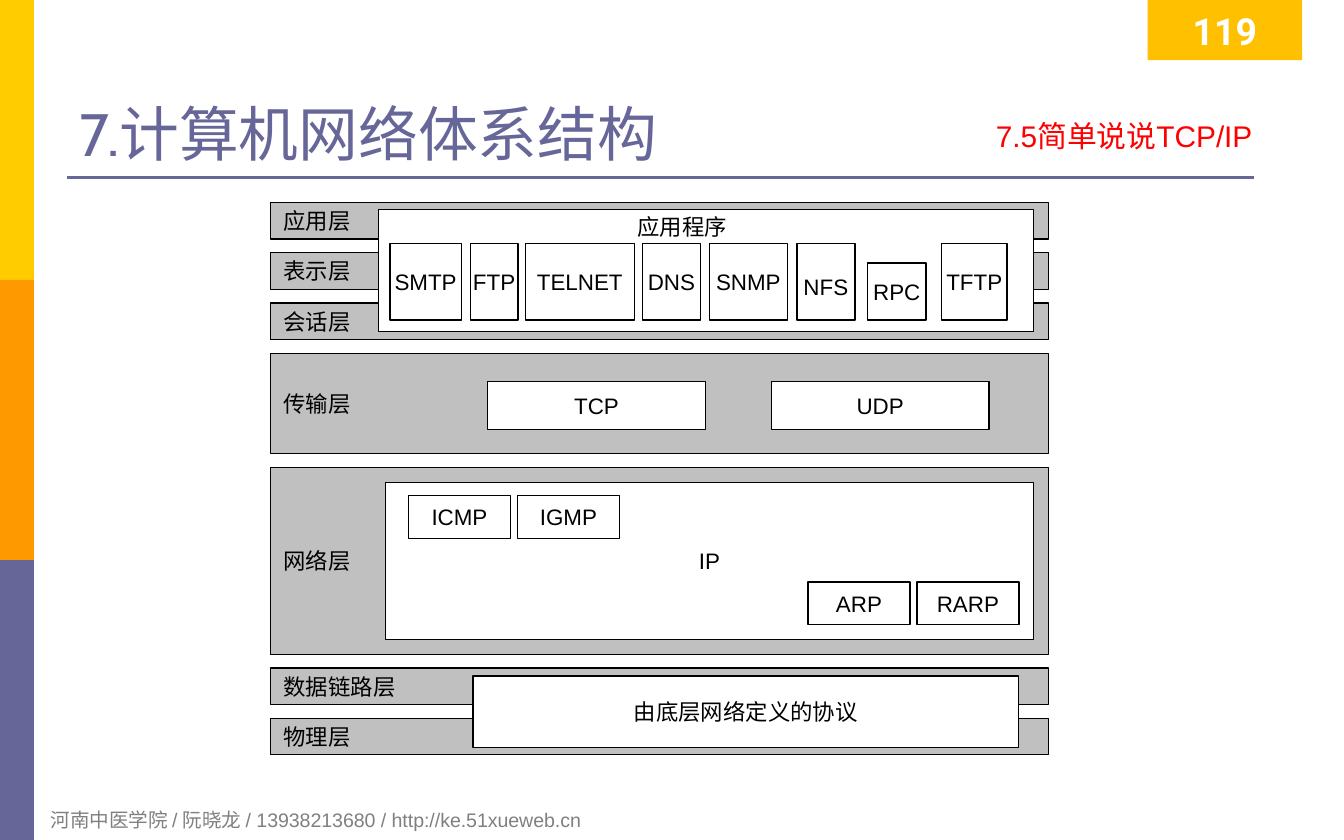
"""Build the TCP/IP layer diagram slide."""
from dataclasses import dataclass

from lxml.etree import SubElement
from pptx import Presentation
from pptx.dml.color import RGBColor
from pptx.enum.shapes import MSO_CONNECTOR, MSO_SHAPE
from pptx.enum.text import MSO_ANCHOR, PP_ALIGN
from pptx.oxml.ns import qn
from pptx.util import Cm, Pt


@dataclass(frozen=True)
class Theme:
    """Colours, fonts and type sizes of the slide."""
    yellow: str = "FFCC00"
    orange: str = "FF9900"
    violet: str = "666699"
    badge: str = "FFC000"
    layer: str = "C0C0C0"
    white: str = "FFFFFF"
    black: str = "000000"
    red: str = "FF0000"
    grey: str = "808080"
    body_font: str = "Arial"
    title_font: str = "Cabin"
    badge_font: str = "Roboto"
    title_size: float = 32
    badge_size: float = 20
    section_size: float = 16
    label_size: float = 12
    footer_size: float = 10.5


T = Theme()
LAYERS = [("应用层", 0.69), ("表示层", 0.69), ("会话层", 0.69), ("传输层", 1.9),
          ("网络层", 3.53), ("数据链路层", 0.69), ("物理层", 0.69)]
LAYER_LEFT, LAYER_TOP, LAYER_WIDTH, LAYER_GAP = 5.11, 3.83, 14.71, 0.26
APPS = [("SMTP", 7.37, 1.35, 1.45), ("FTP", 8.89, 0.9, 1.45),
        ("TELNET", 9.93, 2.06, 1.45), ("DNS", 12.14, 1.1, 1.45),
        ("SNMP", 13.41, 1.47, 1.45), ("NFS", 15.06, 1.1, 1.45),
        ("RPC", 16.4, 1.1, 1.08), ("TFTP", 17.8, 1.23, 1.45)]
APPS_BOTTOM = 6.05


def write(s, text, size=T.label_size, color=T.black, font=T.body_font, bold=False,
          align=PP_ALIGN.CENTER, anchor=MSO_ANCHOR.MIDDLE, wrap=False,
          inset=(0.25, 0.13), top=None):
    """Put one formatted line of text into a shape."""
    tf = s.text_frame
    side, edge = (Cm(v) for v in inset)
    frame = {"word_wrap": wrap, "vertical_anchor": anchor,
             "margin_left": side, "margin_right": side,
             "margin_top": edge if top is None else Cm(top), "margin_bottom": edge}
    for name, value in frame.items():
        setattr(tf, name, value)
    p = tf.paragraphs[0]
    p.alignment = align
    r = p.add_run()
    r.text = text
    for name, value in {"name": font, "size": Pt(size), "bold": bold}.items():
        setattr(r.font, name, value)
    r.font.color.rgb = RGBColor.from_string(color)


def add_box(slide, x, y, w, h, fill=T.white, line=T.black, text="", **fmt):
    """Add a filled rectangle with an optional outline and label."""
    s = slide.shapes.add_shape(MSO_SHAPE.RECTANGLE, Cm(x), Cm(y), Cm(w), Cm(h))
    s.shadow.inherit = False
    s.fill.solid()
    s.fill.fore_color.rgb = RGBColor.from_string(fill)
    if line:
        s.line.color.rgb = RGBColor.from_string(line)
        s.line.width = Pt(0.75)
    else:
        s.line.fill.background()
    if text:
        write(s, text, **fmt)


def add_label(slide, x, y, w, h, text, **fmt):
    """Add a text box."""
    write(slide.shapes.add_textbox(Cm(x), Cm(y), Cm(w), Cm(h)), text, **fmt)


def add_rule(slide, x1, x2, y):
    """Add the horizontal line below the title."""
    s = slide.shapes.add_connector(MSO_CONNECTOR.STRAIGHT, Cm(x1), Cm(y), Cm(x2), Cm(y))
    s.line.color.rgb = RGBColor.from_string(T.violet)
    s.line.width = Pt(1.5)
    SubElement(s.element.spPr, qn("a:effectLst"))


def add_title(slide, text):
    """Place and format the title placeholder."""
    s = slide.shapes.title
    place = {"left": 1.27, "top": 0.64, "width": 22.86, "height": 2.64}
    for name, value in place.items():
        setattr(s, name, Cm(value))
    write(s, text, size=T.title_size, color=T.violet, font=T.title_font, wrap=True,
          align=PP_ALIGN.LEFT, anchor=MSO_ANCHOR.BOTTOM, inset=(0.23, 0.1))


def add_frame(slide):
    """Add the side bands, rule, title, page badge, section name and footer."""
    band = 15.88 / 3
    for i, color in enumerate((T.yellow, T.orange, T.violet)):
        add_box(slide, 0, i * band, 0.64, band, color, None)
    add_rule(slide, 1.27, 23.7, 3.35)
    add_label(slide, 0.71, 15.14, 17.2, 0.71,
              "河南中医学院 / 阮晓龙 / 13938213680 / http://ke.51xueweb.cn",
              size=T.footer_size, color=T.grey, align=PP_ALIGN.LEFT, wrap=True)
    add_title(slide, "7.计算机网络体系结构")
    add_box(slide, 21.69, 0, 2.92, 1.14, T.badge, None, "119", size=T.badge_size,
            color=T.white, font=T.badge_font, bold=True, inset=(0.23, 0.1))
    add_label(slide, 15.9, 2.13, 8, 0.99, "7.5简单说说TCP/IP", size=T.section_size,
              color=T.red, align=PP_ALIGN.RIGHT, anchor=MSO_ANCHOR.TOP, wrap=True,
              inset=(0.23, 0.1))


def add_layers(slide):
    """Stack the seven grey layers with equal gaps."""
    y = LAYER_TOP
    for name, h in LAYERS:
        add_box(slide, LAYER_LEFT, y, LAYER_WIDTH, h, T.layer, text=name,
                align=PP_ALIGN.LEFT, wrap=True)
        y += h + LAYER_GAP


def add_protocols(slide):
    """Add the protocol boxes on top of the layers."""
    add_box(slide, 7.16, 3.96, 12.37, 2.31)
    for name, x, w, h in APPS:
        add_box(slide, x, APPS_BOTTOM - h, w, h, text=name,
                top=0.33 if name == "NFS" else None)
    for name, x in (("TCP", 9.22), ("UDP", 14.58)):
        add_box(slide, x, 7.21, 4.11, 0.91, text=name)
    add_box(slide, 7.29, 9.12, 12.24, 2.97, text="IP")
    for names, x, y in ((("ICMP", "IGMP"), 7.72, 9.37), (("ARP", "RARP"), 15.27, 11)):
        for i, name in enumerate(names):
            add_box(slide, x + i * 2.06, y, 1.93, 0.81, text=name)
    add_box(slide, 8.94, 12.78, 10.31, 1.35, text="由底层网络定义的协议")
    add_label(slide, 11.79, 3.91, 2.21, 0.76, "应用程序")


def main():
    """Build and save the slide."""
    prs = Presentation()
    prs.slide_width, prs.slide_height = Cm(25.4), Cm(15.88)
    slide = prs.slides.add_slide(prs.slide_layouts[5])
    add_frame(slide)
    add_layers(slide)
    add_protocols(slide)
    prs.save("out.pptx")


if __name__ == "__main__":
    main()
